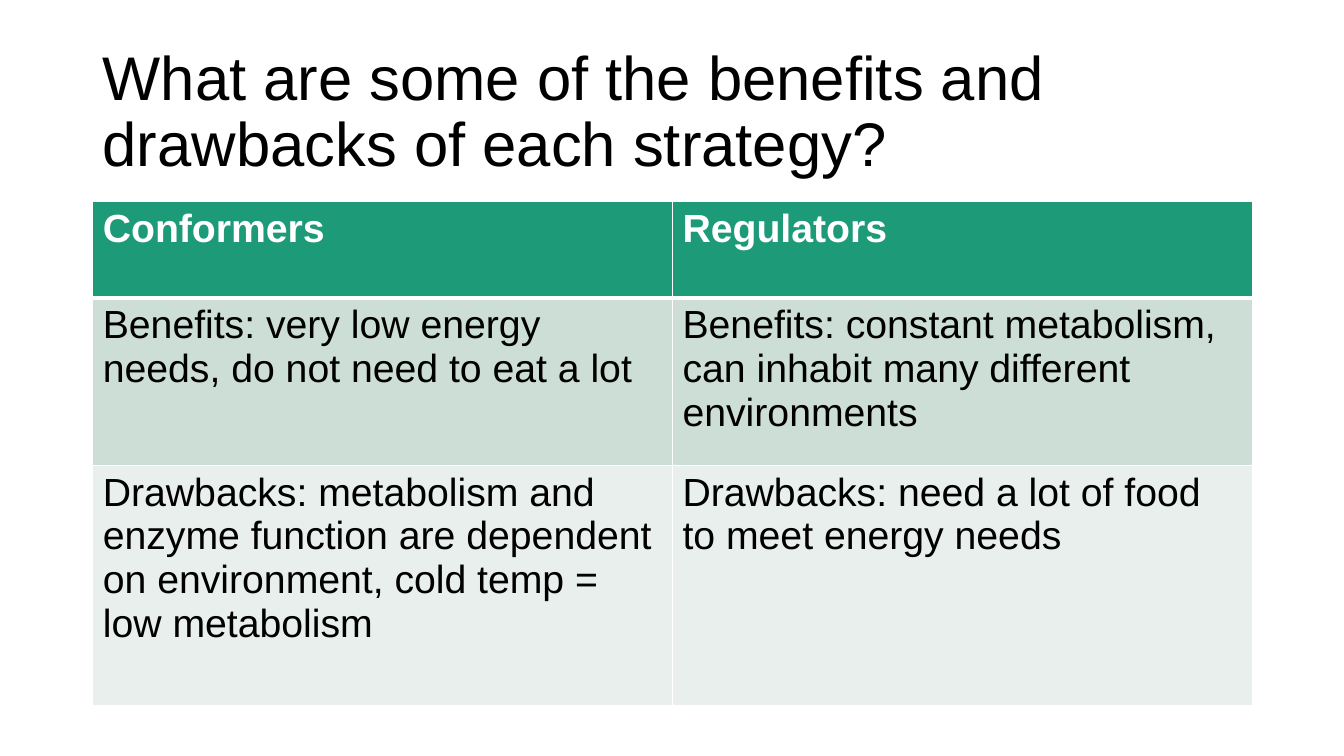
import pptx
import pptx.dml.color
import pptx.enum.text
import pptx.oxml
import pptx.oxml.ns
import pptx.util


def color(hex_string):
    return pptx.dml.color.RGBColor.from_string(hex_string)


def add_border(cell, position, side, points):
    line = pptx.oxml.parse_xml(
        f'<a:{side} {pptx.oxml.ns.nsdecls("a")} w="{pptx.util.Pt(points)}">'
        '<a:solidFill><a:srgbClr val="FFFFFF"/></a:solidFill>'
        f'</a:{side}>'
    )
    cell._tc.get_or_add_tcPr().insert(position, line)


deck = pptx.Presentation()
deck.slide_width = pptx.util.Inches(13.33)
deck.slide_height = pptx.util.Inches(7.5)
page = deck.slides.add_slide(deck.slide_layouts[6])

left = pptx.util.Inches(0.92)
width = pptx.util.Inches(11.5)

title = page.shapes.add_textbox(
    left, pptx.util.Inches(0.4), width, pptx.util.Inches(1.45)
)
title.text_frame.word_wrap = True
title.text_frame.vertical_anchor = pptx.enum.text.MSO_ANCHOR.MIDDLE
para = title.text_frame.paragraphs[0]
para.text = "What are some of the benefits and drawbacks of each strategy?"
para.line_spacing = 0.9
para.font.name = "Arial"
para.font.size = pptx.util.Pt(44)
para.font.color.rgb = color("000000")

strategies = [
    ("Conformers", "Regulators"),
    (
        "Benefits: very low energy needs, do not need to eat a lot",
        "Benefits: constant metabolism, can inhabit many different environments",
    ),
    (
        "Drawbacks: metabolism and enzyme function are dependent on environment, "
        "cold temp = low metabolism",
        "Drawbacks: need a lot of food to meet energy needs",
    ),
]
row_heights = [0.96, 1.66, 2.38]
row_fills = ["1D9A78", "CDDED6", "E8EFEC"]

table = page.shapes.add_table(
    len(strategies), 2, left, pptx.util.Inches(2), width,
    pptx.util.Inches(sum(row_heights)),
).table

for row, texts in enumerate(strategies):
    table.rows[row].height = pptx.util.Inches(row_heights[row])
    header = row == 0
    borders = {"lnL": 1, "lnR": 1, "lnT": 3 if row == 1 else 1, "lnB": 3 if header else 1}
    for column, text in enumerate(texts):
        cell = table.cell(row, column)
        cell.fill.solid()
        cell.fill.fore_color.rgb = color(row_fills[row])
        for position, (side, points) in enumerate(borders.items()):
            add_border(cell, position, side, points)
        para = cell.text_frame.paragraphs[0]
        para.text = text
        para.font.name = "Arial"
        para.font.size = pptx.util.Pt(28)
        para.font.bold = header
        para.font.color.rgb = color("FFFFFF" if header else "000000")

deck.save("out.pptx")
